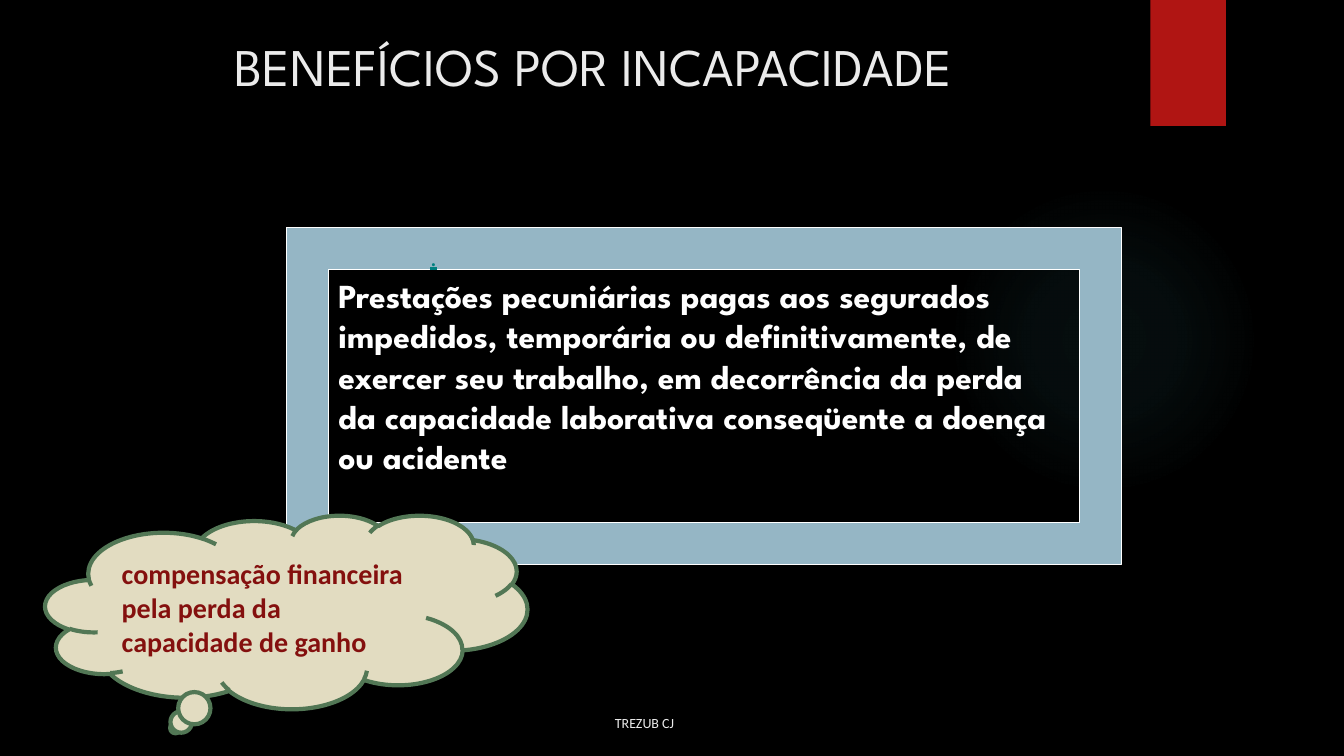
from lxml import etree
from pptx import Presentation
from pptx.dml.color import RGBColor
from pptx.enum.shapes import MSO_SHAPE
from pptx.enum.text import MSO_ANCHOR, PP_ALIGN
from pptx.oxml import parse_xml
from pptx.oxml.ns import nsdecls, qn
from pptx.util import Inches, Pt

HEADING_FONT = "League Spartan"
BODY_FONT = "Calibri"
PALE = "EBEBEB"


def color(value):
    return RGBColor.from_string(value)


class SlideBuilder:
    def __init__(self, slide, background):
        self.slide = slide
        fill = slide.background.fill
        fill.solid()
        fill.fore_color.rgb = color(background)

    def label(self, shape, text, font, size, text_color, bold=False,
              underline=False, anchor=MSO_ANCHOR.TOP, indent=0):
        frame = shape.text_frame
        frame.word_wrap = True
        frame.vertical_anchor = anchor
        frame.text = text
        paragraph = frame.paragraphs[0]
        paragraph.alignment = PP_ALIGN.LEFT
        if indent:
            properties = paragraph._p.get_or_add_pPr()
            properties.set("marL", str(Inches(indent)))
            properties.set("indent", "0")
        style = paragraph.runs[0].font
        style.name = font
        style.size = Pt(size)
        style.bold = bold
        style.underline = underline
        style.color.rgb = color(text_color)

    def text(self, left, top, width, height, text, font, size, text_color, **options):
        box = self.slide.shapes.add_textbox(
            Inches(left), Inches(top), Inches(width), Inches(height))
        self.label(box, text, font, size, text_color, **options)

    def shape(self, kind, left, top, width, height, fill, line=None, line_width=1):
        shape = self.slide.shapes.add_shape(
            kind, Inches(left), Inches(top), Inches(width), Inches(height))
        shape.shadow.inherit = False
        shape.fill.solid()
        shape.fill.fore_color.rgb = color(fill)
        if line:
            shape.line.color.rgb = color(line)
            shape.line.width = Pt(line_width)
        else:
            shape.line.fill.background()
        return shape

    def glow(self, left, top, size, fill, stops):
        shape = self.shape(MSO_SHAPE.OVAL, left, top, size, size, fill)
        gradient = parse_xml(f'<a:gradFill {nsdecls("a")}><a:gsLst/></a:gradFill>')
        for position, opacity in stops:
            stop = etree.SubElement(gradient[0], qn("a:gs"), pos=str(position * 1000))
            tint = etree.SubElement(stop, qn("a:srgbClr"), val=fill)
            etree.SubElement(tint, qn("a:alpha"), val=str(opacity * 1000))
        circle = etree.SubElement(gradient, qn("a:path"))
        circle.set("path", "circle")
        center = dict.fromkeys("ltrb", "50000")
        etree.SubElement(circle, qn("a:fillToRect"), center)
        solid = shape._element.spPr.find(qn("a:solidFill"))
        solid.getparent().replace(solid, gradient)


def main():
    presentation = Presentation()
    presentation.slide_width = Inches(13.33)
    presentation.slide_height = Inches(7.5)
    slide = presentation.slides.add_slide(presentation.slide_layouts[6])
    builder = SlideBuilder(slide, "000000")

    builder.glow(9.41, 1.83, 3.08, "50B9C1", [(0, 7), (36, 6), (69, 0)])
    builder.shape(MSO_SHAPE.RECTANGLE, 11.41, 0, 0.75, 1.25, "B01513")
    builder.text(2.17, 0.28, 9, 1.25, "BENEFÍCIOS POR INCAPACIDADE",
                 HEADING_FONT, 37.8, PALE, indent=0.06)
    builder.text(6, 7, 4.61, 0.3, "TREZUB CJ", BODY_FONT, 10, PALE,
                 anchor=MSO_ANCHOR.BOTTOM)

    definition = builder.shape(MSO_SHAPE.FRAME, 2.84, 2.26, 8.28, 3.34,
                               "95B6C5", "FFFFFF", 0.75)
    builder.label(
        definition,
        "Prestações pecuniárias pagas aos segurados impedidos, temporária ou "
        "definitivamente, de exercer seu trabalho, em decorrência da perda da "
        "capacidade laborativa conseqüente a doença ou acidente",
        HEADING_FONT, 24, "FFFFFF", bold=True)
    builder.text(4.17, 2.34, 5, 0.4, ".", BODY_FONT, 18, "008080", underline=True)

    cloud = builder.shape(MSO_SHAPE.CLOUD_CALLOUT, 0.45, 5.11, 4.78, 1.92,
                          "E2DCC1", "527755", 3)
    cloud.adjustments[0] = -0.23
    cloud.adjustments[1] = 0.6
    builder.label(cloud, "compensação financeira pela perda da capacidade de ganho",
                  BODY_FONT, 20, "84100E", bold=True, anchor=MSO_ANCHOR.MIDDLE)

    presentation.save("out.pptx")


if __name__ == "__main__":
    main()
